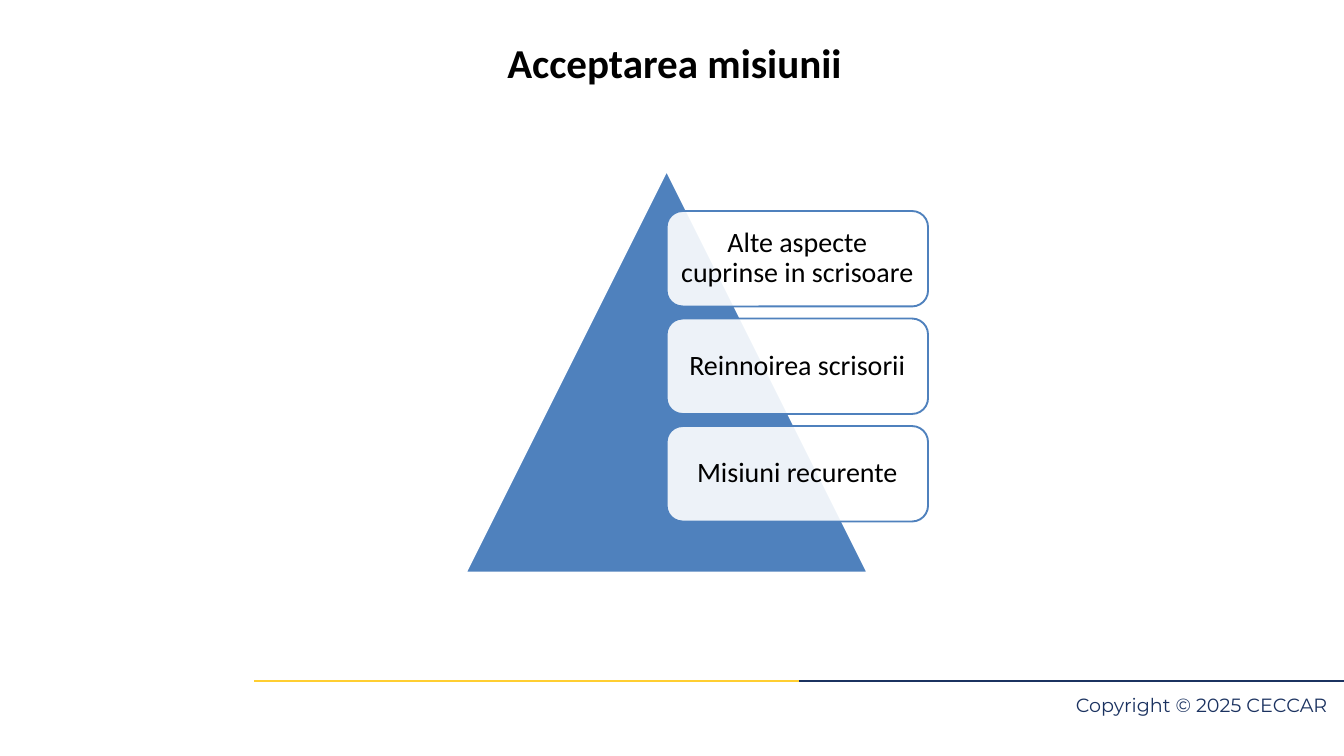
from lxml.etree import SubElement
from pptx import Presentation
from pptx.dml.color import RGBColor
from pptx.enum.shapes import MSO_CONNECTOR, MSO_SHAPE
from pptx.enum.text import MSO_ANCHOR, PP_ALIGN
from pptx.oxml.ns import qn
from pptx.util import Inches, Pt

BLUE, NAVY, YELLOW = "4F81BD", "1B3260", "FFCE31"
WHITE, BLACK = "FFFFFF", "000000"


def color(hex_string):
    return RGBColor.from_string(hex_string)


class SlideBuilder:
    """Holds the text style and the current slide."""

    font = "Calibri"

    def __init__(self, slide):
        self.slide = slide

    def add_text(self, frame, text, size, ink=BLACK, bold=False, font=None,
                 align=PP_ALIGN.CENTER, spacing=None, inset=None):
        frame.word_wrap = True
        frame.vertical_anchor = MSO_ANCHOR.MIDDLE
        if inset is not None:
            frame.margin_left = frame.margin_right = Inches(inset)
            frame.margin_top = frame.margin_bottom = Inches(inset)
        paragraph = frame.paragraphs[0]
        paragraph.alignment = align
        if spacing is not None:
            paragraph.line_spacing = spacing
        run = paragraph.add_run()
        run.text = text
        run.font.name = font or self.font
        run.font.size = Pt(size)
        run.font.bold = bold
        run.font.color.rgb = color(ink)

    def title(self, text, left, top, width, height):
        title = self.slide.shapes.title
        title.left, title.top = Inches(left), Inches(top)
        title.width, title.height = Inches(width), Inches(height)
        self.add_text(title.text_frame, text, 44, bold=True)

    def rule(self, start, end, y, ink):
        rule = self.slide.shapes.add_connector(
            MSO_CONNECTOR.STRAIGHT, Inches(start), Inches(y), Inches(end), Inches(y))
        rule.line.color.rgb = color(ink)
        rule.line.width = Pt(2.25)
        SubElement(rule._element.spPr, qn("a:effectLst"))

    def shape(self, kind, left, top, width, height, fill, line, opacity=100):
        shape = self.slide.shapes.add_shape(
            kind, Inches(left), Inches(top), Inches(width), Inches(height))
        shape.shadow.inherit = False
        shape.fill.solid()
        shape.fill.fore_color.rgb = color(fill)
        if opacity < 100:
            fill_color = shape._element.spPr.find(qn("a:solidFill"))[0]
            SubElement(fill_color, qn("a:alpha"), val=str(opacity * 1000))
        shape.line.color.rgb = color(line)
        shape.line.width = Pt(2)
        return shape

    def card(self, text, left, top, width, height):
        card = self.shape(MSO_SHAPE.ROUNDED_RECTANGLE, left, top, width, height,
                          WHITE, BLUE, opacity=90)
        self.add_text(card.text_frame, text, 30, spacing=0.9, inset=0.12)

    def footer(self, text, left, top, width, height):
        footer = self.slide.shapes.add_textbox(
            Inches(left), Inches(top), Inches(width), Inches(height))
        self.add_text(footer.text_frame, text, 20.5, NAVY, font="Montserrat",
                      align=PP_ALIGN.RIGHT, spacing=Pt(20.5), inset=0)


def main():
    presentation = Presentation()
    presentation.slide_width = Inches(20)
    presentation.slide_height = Inches(11.25)
    builder = SlideBuilder(presentation.slides.add_slide(presentation.slide_layouts[5]))

    # Footer rules and copyright
    builder.rule(11.88, 20, 10.14, NAVY)
    builder.footer("Copyright © 2025 CECCAR ", 14.25, 10.37, 5.58, 0.3)
    builder.rule(3.78, 11.89, 10.14, YELLOW)

    # Title
    builder.title("Acceptarea misiunii", 0.5, 0.3, 19.08, 1.25)

    # Pyramid with its cards, starting at the apex line
    pyramid_left, pyramid_size = 6.93, 5.98
    builder.shape(MSO_SHAPE.ISOSCELES_TRIANGLE, pyramid_left, 2.54,
                  pyramid_size, pyramid_size, BLUE, WHITE)
    topics = ["Alte aspecte cuprinse in scrisoare", "Reinnoirea scrisorii",
              "Misiuni recurente"]
    card_top, card_pitch = 3.14, 1.6
    for row, topic in enumerate(topics):
        builder.card(topic, pyramid_left + pyramid_size / 2,
                     card_top + row * card_pitch, 3.89, 1.42)

    presentation.save("out.pptx")


if __name__ == "__main__":
    main()
